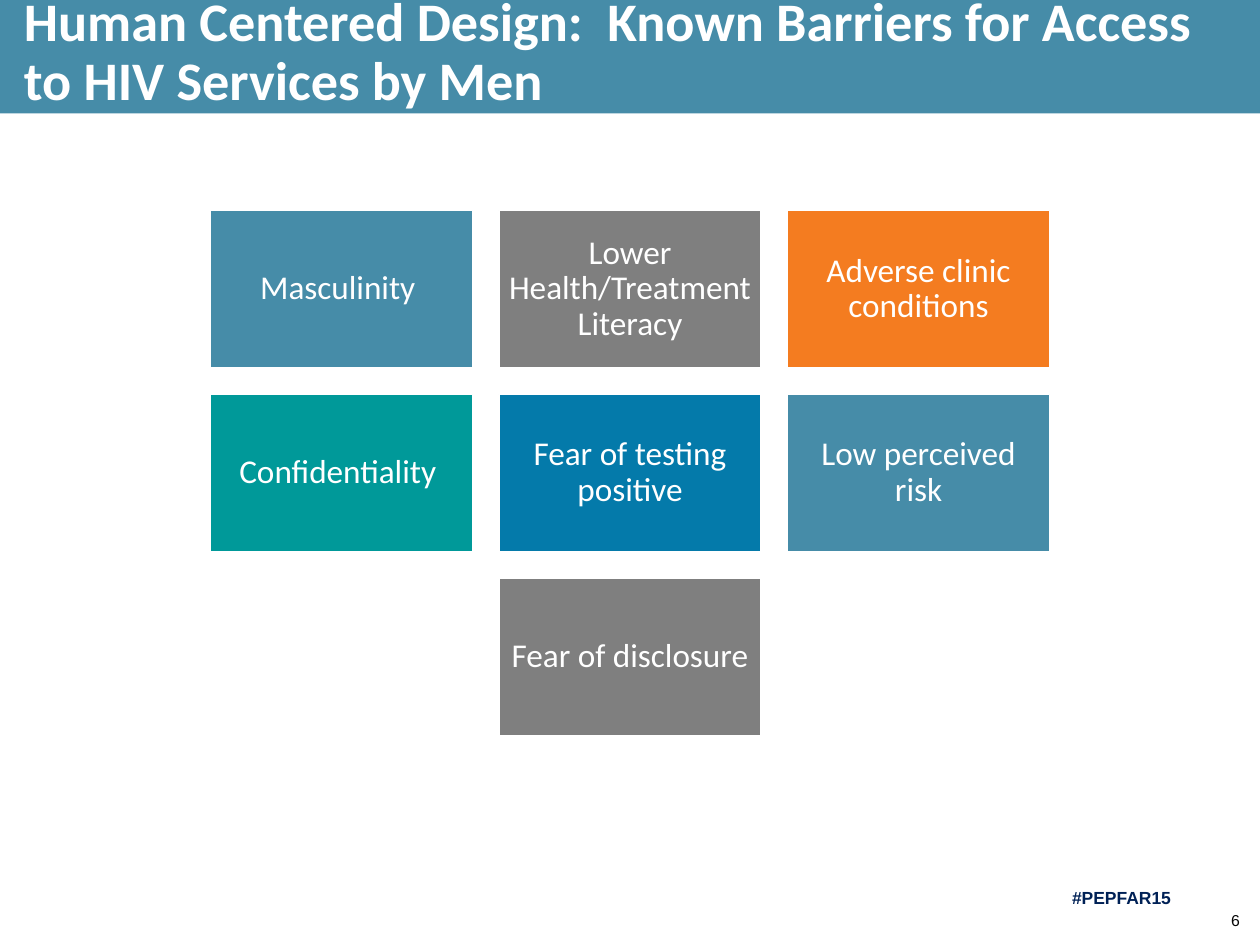
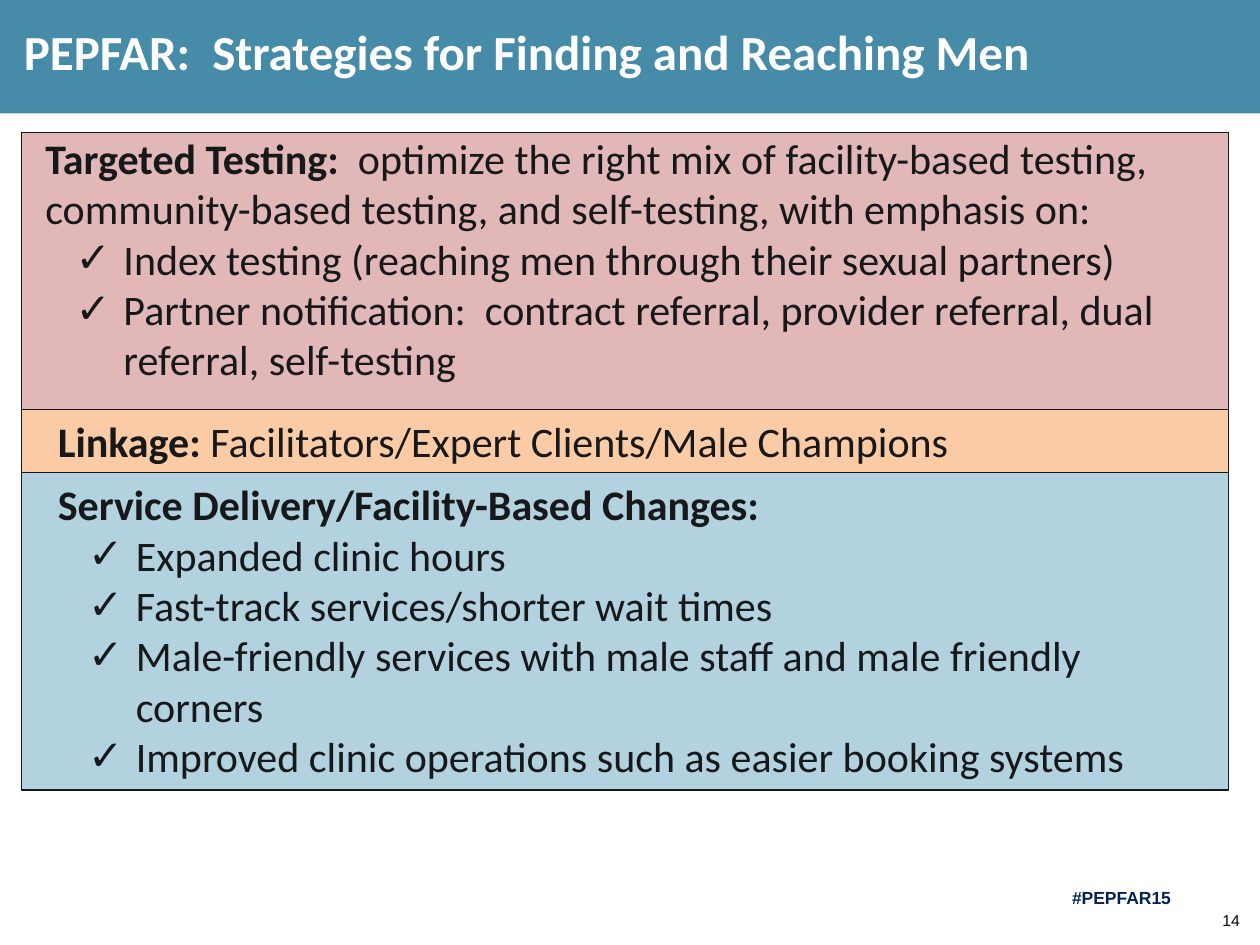
from lxml.etree import SubElement
from pptx import Presentation
from pptx.dml.color import RGBColor
from pptx.enum.shapes import MSO_SHAPE
from pptx.enum.text import MSO_ANCHOR, MSO_AUTO_SIZE, PP_ALIGN
from pptx.oxml.ns import qn
from pptx.util import Inches, Pt

COLORS = {
    "band": "468CA8",
    "gray": "7F7F7F",
    "orange": "F47C20",
    "teal": "009999",
    "blue": "047AAA",
    "rose": "E2B7B7",
    "peach": "FBCBA6",
    "sky": "B2D2DF",
    "white": "FFFFFF",
    "ink": "16181A",
    "navy": "002156",
    "number": "060606",
}

BARRIER_ROWS = [
    [("Masculinity ", "band"), ("Lower Health/Treatment Literacy", "gray"),
     ("Adverse clinic conditions", "orange")],
    [("Confidentiality ", "teal"), ("Fear of testing positive", "blue"),
     ("Low perceived risk", "band")],
    [("Fear of disclosure", "gray")],
]
TILE_WIDTH, TILE_HEIGHT, TILE_GAP, TILES_TOP = 2.08, 1.25, 0.21, 1.67
SLIDE_WIDTH = 10


class Deck:
    def __init__(self):
        self.presentation = Presentation()
        self.presentation.slide_width = Inches(SLIDE_WIDTH)
        self.presentation.slide_height = Inches(7.5)
        self.slide = None

    def color(self, name):
        return RGBColor.from_string(COLORS[name])

    def style(self, runs, size, color, bold=False, font="Calibri"):
        for run in runs:
            run.font.name = font
            run.font.size = Pt(size)
            run.font.bold = bold
            run.font.color.rgb = self.color(color)

    def place(self, shape, left, top, width, height):
        shape.left, shape.top = Inches(left), Inches(top)
        shape.width, shape.height = Inches(width), Inches(height)

    def frame(self, shape, horizontal, vertical, anchor=MSO_ANCHOR.TOP):
        frame = shape.text_frame
        frame.word_wrap = True
        frame.auto_size = MSO_AUTO_SIZE.NONE
        frame.margin_left = frame.margin_right = Inches(horizontal)
        frame.margin_top = frame.margin_bottom = Inches(vertical)
        frame.vertical_anchor = anchor
        return frame

    def paint(self, shape, fill, line=None, line_width=1):
        shape.fill.solid()
        shape.fill.fore_color.rgb = self.color(fill)
        if line:
            shape.line.color.rgb = self.color(line)
            shape.line.width = Pt(line_width)
        else:
            shape.line.fill.background()

    def rectangle(self, left, top, width, height):
        shape = self.slide.shapes.add_shape(
            MSO_SHAPE.RECTANGLE, Inches(left), Inches(top), Inches(width), Inches(height))
        shape.shadow.inherit = False
        return shape

    def label(self, text, left, top, width, height, size, color, bold=False,
              align=PP_ALIGN.LEFT, anchor=MSO_ANCHOR.TOP):
        box = self.slide.shapes.add_textbox(
            Inches(left), Inches(top), Inches(width), Inches(height))
        frame = self.frame(box, 0.1, 0.05, anchor)
        frame.word_wrap = False
        frame.text = text
        frame.paragraphs[0].alignment = align
        self.style(frame.paragraphs[0].runs, size, color, bold, "Arial")

    def add_slide(self, layout, title, number, size, top, height):
        self.slide = self.presentation.slides.add_slide(
            self.presentation.slide_layouts[layout])
        self.paint(self.rectangle(0, 0, SLIDE_WIDTH, 0.9), "band")
        self.label(str(number), 9.46, 7.1, 0.48, 0.4, 9, "number",
                   align=PP_ALIGN.RIGHT, anchor=MSO_ANCHOR.MIDDLE)
        self.label("#PEPFAR15", 8.41, 6.99, 0.99, 0.27, 10, "navy", bold=True)
        heading = self.slide.shapes.title
        heading.element.getparent().append(heading.element)
        self.place(heading, 0.19, top, 9.59, height)
        frame = self.frame(heading, 0, 0)
        frame.text = title
        paragraph = frame.paragraphs[0]
        paragraph.alignment = PP_ALIGN.LEFT
        paragraph.line_spacing = 0.9
        self.style(paragraph.runs, size, "white", bold=True)

    def tile(self, text, fill, left, top):
        shape = self.rectangle(left, top, TILE_WIDTH, TILE_HEIGHT)
        self.paint(shape, fill, "white")
        frame = self.frame(shape, 0.08, 0.08, MSO_ANCHOR.MIDDLE)
        frame.text = text
        paragraph = frame.paragraphs[0]
        paragraph.alignment = PP_ALIGN.CENTER
        paragraph.line_spacing = 0.9
        self.style(paragraph.runs, 19, "white")

    def indent(self, paragraph, margin, first_line, bullet=None):
        paragraph.alignment = PP_ALIGN.LEFT
        paragraph.space_before = Pt(0)
        properties = paragraph._p.get_or_add_pPr()
        properties.set("marL", str(Inches(margin)))
        properties.set("indent", str(Inches(first_line)))
        if bullet:
            SubElement(properties, qn("a:buFont"), typeface="Arial")
            SubElement(properties, qn("a:buChar"), char=bullet)
        else:
            SubElement(properties, qn("a:buNone"))

    def panel(self, shape, fill, heading, detail="", items=(), horizontal=0.1, vertical=0.05):
        self.paint(shape, fill, "ink", 0.75)
        frame = self.frame(shape, horizontal, vertical)
        frame.text = heading
        paragraph = frame.paragraphs[0]
        self.indent(paragraph, 0.19, 0)
        self.style(paragraph.runs, 24, "ink", bold=True)
        if detail:
            run = paragraph.add_run()
            run.text = detail
            self.style([run], 24, "ink")
        for item in items:
            paragraph = frame.add_paragraph()
            paragraph.text = item
            self.indent(paragraph, 0.81, -0.38, "✓")
            self.style(paragraph.runs, 24, "ink")


def barriers_slide(deck):
    deck.add_slide(
        5, "Human Centered Design:  Known Barriers for Access to HIV Services by Men",
        6, 31, -0.04, 0.99)
    for row, tiles in enumerate(BARRIER_ROWS):
        row_width = len(tiles) * (TILE_WIDTH + TILE_GAP) - TILE_GAP
        row_left = (SLIDE_WIDTH - row_width) / 2
        top = TILES_TOP + row * (TILE_HEIGHT + TILE_GAP)
        for column, (text, fill) in enumerate(tiles):
            deck.tile(text, fill, row_left + column * (TILE_WIDTH + TILE_GAP), top)


def strategies_slide(deck):
    deck.add_slide(1, "PEPFAR:  Strategies for Finding and Reaching Men", 14, 28, 0.22, 0.5)
    left, width = 0.17, 9.58
    testing = deck.slide.placeholders[1]
    deck.place(testing, left, 1.05, width, 2.2)
    deck.panel(
        testing, "rose", "Targeted Testing:  ",
        "optimize the right mix of facility-based testing, community-based testing, "
        "and self-testing, with emphasis on:",
        ["Index testing (reaching men through their sexual partners)",
         "Partner notification:  contract referral, provider referral, dual referral, "
         "self-testing"],
        horizontal=0, vertical=0)
    deck.panel(deck.rectangle(left, 3.25, width, 0.5), "peach", "Linkage: ",
               "Facilitators/Expert Clients/Male Champions")
    deck.panel(
        deck.rectangle(left, 3.75, width, 2.52), "sky",
        "Service Delivery/Facility-Based Changes:",
        items=["Expanded clinic hours",
               "Fast-track services/shorter wait times",
               "Male-friendly services with male staff and male friendly corners",
               "Improved clinic operations such as easier booking systems"])


def main():
    deck = Deck()
    barriers_slide(deck)
    strategies_slide(deck)
    deck.presentation.save("out.pptx")


if __name__ == "__main__":
    main()
